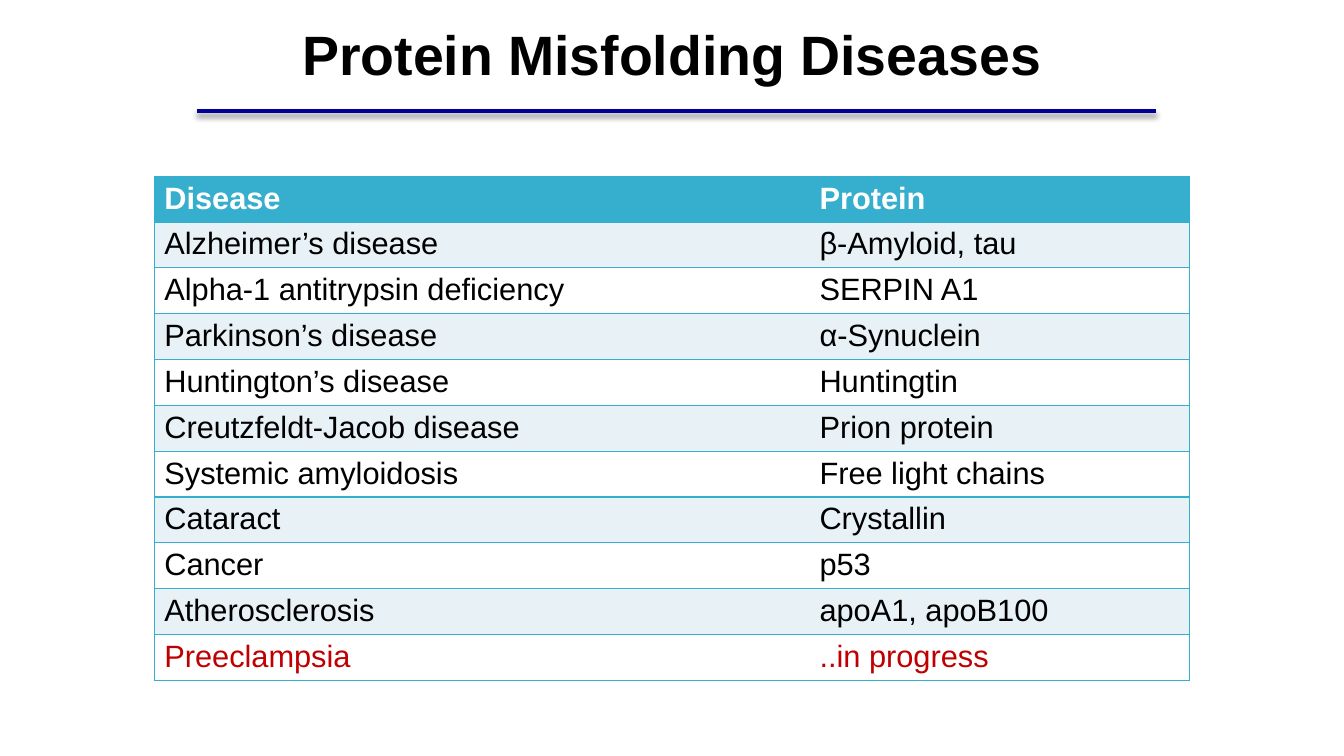
from lxml.etree import SubElement
from pptx import Presentation
from pptx.dml.color import RGBColor
from pptx.enum.shapes import MSO_CONNECTOR
from pptx.enum.text import MSO_ANCHOR, MSO_AUTO_SIZE, PP_ALIGN
from pptx.oxml import parse_xml
from pptx.oxml.ns import nsdecls, qn
from pptx.util import Pt

COLORS = {
    "rule": "000099",
    "teal": "36AFCE",
    "band": "E8F2F6",
    "white": "FFFFFF",
    "black": "000000",
    "red": "C00000",
}
ROWS = [
    ("Disease", "Protein"),
    ("Alzheimer’s disease", "β-Amyloid, tau"),
    ("Alpha-1 antitrypsin deficiency", "SERPIN A1"),
    ("Parkinson’s disease", "α-Synuclein"),
    ("Huntington’s disease", "Huntingtin"),
    ("Creutzfeldt-Jacob disease", "Prion protein"),
    ("Systemic amyloidosis", "Free light chains"),
    ("Cataract", "Crystallin"),
    ("Cancer", "p53"),
    ("Atherosclerosis", "apoA1, apoB100"),
    ("Preeclampsia", "..in progress"),
]
COLUMN_WIDTHS = (468, 271.5)
ROW_HEIGHT = 32.75


def color(name):
    return RGBColor.from_string(COLORS[name])


def write_text(frame, text, size=22, ink="black", bold=False, align=PP_ALIGN.LEFT, spacing=None):
    paragraph = frame.paragraphs[0]
    paragraph.alignment = align
    paragraph.line_spacing = spacing
    run = paragraph.add_run()
    run.text = text
    run.font.name = "Arial"
    run.font.size = Pt(size)
    run.font.bold = bold
    run.font.color.rgb = color(ink)


def add_title(slide, text):
    title = slide.shapes.title
    title.left, title.top, title.width, title.height = Pt(66), Pt(22.3), Pt(828), Pt(37.4)
    frame = title.text_frame
    frame.word_wrap = True
    frame.auto_size = MSO_AUTO_SIZE.NONE
    frame.vertical_anchor = MSO_ANCHOR.MIDDLE
    write_text(frame, text, size=39.6, bold=True, align=PP_ALIGN.CENTER, spacing=0.9)


def add_rule(slide, left, right, top):
    rule = slide.shapes.add_connector(MSO_CONNECTOR.STRAIGHT, Pt(left), Pt(top), Pt(right), Pt(top))
    rule.line.color.rgb = color("rule")
    rule.line.width = Pt(3)
    rule.element.spPr.append(parse_xml(
        f'<a:effectLst {nsdecls("a")}>'
        f'<a:outerShdw blurRad="{Pt(4)}" dist="{Pt(3)}" dir="5400000" rotWithShape="0">'
        f'<a:srgbClr val="{COLORS["black"]}"><a:alpha val="40000"/></a:srgbClr>'
        '</a:outerShdw></a:effectLst>'
    ))


def set_borders(cell, visible_sides):
    properties = cell._tc.get_or_add_tcPr()
    for side in "LRTB":
        line = SubElement(properties, qn(f"a:ln{side}"), w=str(Pt(1)))
        if side in visible_sides:
            fill = SubElement(line, qn("a:solidFill"))
            SubElement(fill, qn("a:srgbClr"), val=COLORS["teal"])
        else:
            SubElement(line, qn("a:noFill"))


def row_colors(index):
    if index == 0:
        return "teal", "white"
    fill = "band" if index % 2 else "white"
    return fill, "red" if index == len(ROWS) - 1 else "black"


def add_disease_table(slide, left, top):
    table = slide.shapes.add_table(
        len(ROWS), len(COLUMN_WIDTHS), Pt(left), Pt(top),
        Pt(sum(COLUMN_WIDTHS)), Pt(ROW_HEIGHT * len(ROWS)),
    ).table
    for column, width in zip(table.columns, COLUMN_WIDTHS):
        column.width = Pt(width)
    for row_index, texts in enumerate(ROWS):
        table.rows[row_index].height = Pt(ROW_HEIGHT)
        fill, ink = row_colors(row_index)
        for column_index, text in enumerate(texts):
            cell = table.cell(row_index, column_index)
            set_borders(cell, "TB" + "LR"[column_index])
            cell.fill.solid()
            cell.fill.fore_color.rgb = color(fill)
            write_text(cell.text_frame, text, ink=ink, bold=row_index == 0)


def main():
    """Build the protein misfolding slide."""
    presentation = Presentation()
    presentation.slide_width, presentation.slide_height = Pt(960), Pt(540)
    slide = presentation.slides.add_slide(presentation.slide_layouts[5])
    add_rule(slide, left=140.5, right=825.8, top=79.2)
    add_disease_table(slide, left=110.2, top=125.8)
    add_title(slide, "Protein Misfolding Diseases")
    presentation.save("out.pptx")


if __name__ == "__main__":
    main()
